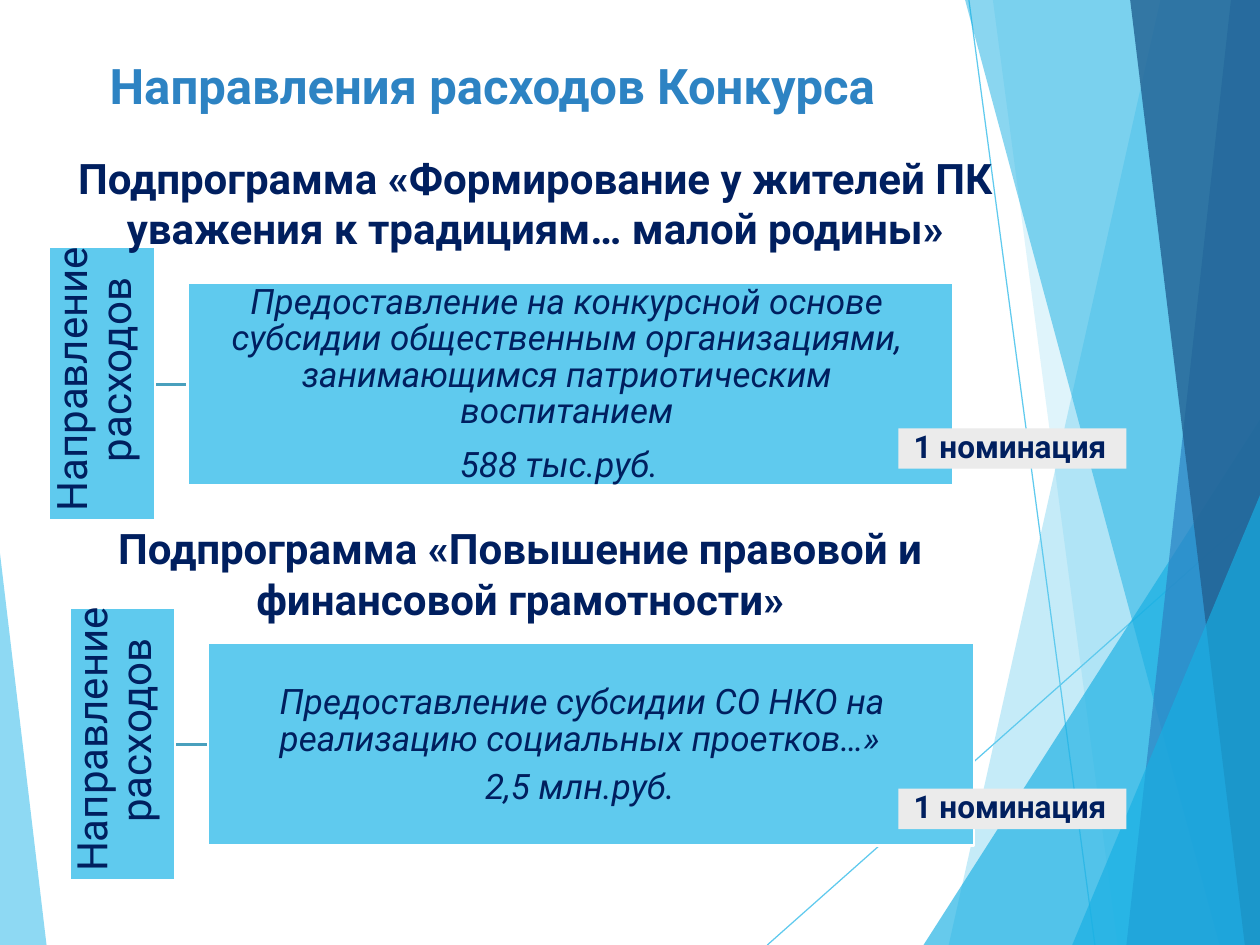
from lxml.etree import SubElement
from pptx import Presentation
from pptx.dml.color import RGBColor
from pptx.enum.shapes import MSO_CONNECTOR, MSO_SHAPE
from pptx.enum.text import MSO_ANCHOR, MSO_AUTO_SIZE, PP_ALIGN
from pptx.oxml.ns import qn
from pptx.util import Inches, Pt

COLORS = {
    "sky": "5FCAEE",
    "azure": "17AFE3",
    "blue": "2D83C3",
    "deep": "226192",
    "navy": "001F5F",
    "teal": "49A0BD",
    "gray": "EBEBEB",
    "white": "FFFFFF",
}
FONT = "Roboto"

FACETS = [
    ([(9.21, 0), (7.53, 7.5), (10, 7.5), (10, 0)], "sky", 36),
    ([(7.88, 0), (8.87, 7.5), (10, 7.5), (10, 0)], "sky", 20),
    ([(10, 3.33), (7.33, 7.5), (10, 7.5)], "azure", 66),
    ([(7.66, 0), (9.68, 7.5), (10, 7.5), (10, 0)], "azure", 50),
    ([(9.77, 0), (8.94, 7.5), (10, 7.5), (10, 0)], "blue", 70),
    ([(8.97, 0), (9.88, 7.5), (10, 7.5), (10, 0)], "deep", 80),
    ([(10, 3.93), (8.51, 7.5), (10, 7.5)], "azure", 66),
    ([(0, 4.39), (0, 7.5), (0.37, 7.5)], "sky", 70),
]


def color(name):
    return RGBColor.from_string(COLORS[name])


def add_facet(slide, points, fill, opacity):
    corners = [(Inches(x), Inches(y)) for x, y in points]
    builder = slide.shapes.build_freeform(*corners[0])
    builder.add_line_segments(corners[1:], close=True)
    shape = builder.convert_to_shape()
    shape.shadow.inherit = False
    shape.fill.solid()
    shape.fill.fore_color.rgb = color(fill)
    shape.line.fill.background()
    tint = shape.fill._xPr.find(qn("a:solidFill"))[0]
    SubElement(tint, qn("a:alpha"), val=str(opacity * 1000))


def add_line(slide, start, end, stroke, width):
    points = [Inches(value) for value in (*start, *end)]
    connector = slide.shapes.add_connector(MSO_CONNECTOR.STRAIGHT, *points)
    connector.line.color.rgb = color(stroke)
    connector.line.width = Pt(width)
    SubElement(connector._element.spPr, qn("a:effectLst"))


def add_block(slide, box, fill, outline=None):
    shape = slide.shapes.add_shape(MSO_SHAPE.RECTANGLE, *map(Inches, box))
    shape.shadow.inherit = False
    shape.fill.solid()
    shape.fill.fore_color.rgb = color(fill)
    if outline:
        shape.line.color.rgb = color(outline)
        shape.line.width = Pt(1.56)
    else:
        shape.line.fill.background()


def fill_text(shape, text, size, bold=False, italic=False, align=PP_ALIGN.LEFT,
              spacing=None, fill="navy"):
    frame = shape.text_frame
    frame.text = text
    frame.word_wrap = True
    frame.auto_size = MSO_AUTO_SIZE.NONE
    frame.vertical_anchor = MSO_ANCHOR.TOP
    frame.margin_left = frame.margin_right = frame.margin_bottom = 0
    frame.margin_top = Inches(0.01)
    paragraph = frame.paragraphs[0]
    paragraph.alignment = align
    if spacing:
        paragraph.line_spacing = Pt(spacing)
    for run in paragraph.runs:
        run.font.name = FONT
        run.font.size = Pt(size)
        run.font.bold = bold
        run.font.italic = italic
        run.font.color.rgb = color(fill)


def add_text(slide, box, text, size, **style):
    shape = slide.shapes.add_textbox(*map(Inches, box))
    fill_text(shape, text, size, **style)
    return shape


def add_side_label(slide, left, top):
    add_block(slide, (left, top, 0.84, 2.17), "sky", "white")
    label = add_text(slide, (left + 0.02, top - 0.13, 0.7, 2.24),
                     "Направление\vрасходов", 24, spacing=25.1)
    frame = label.text_frame
    frame.margin_top = Inches(0.05)
    frame._txBody.bodyPr.set("vert", "vert270")
    properties = frame.paragraphs[0]._p.get_or_add_pPr()
    properties.set("marL", str(Inches(0.4)))
    properties.set("indent", str(-Inches(0.39)))


def add_section(slide, left, top, heading, heading_box, body, body_box, body_align,
                amount, amount_box):
    middle = top + 1.09
    add_line(slide, (left + 0.84, middle), (left + 1.1, middle), "teal", 1.71)
    add_side_label(slide, left, top)
    add_block(slide, (left + 1.1, top + 0.28, 6.08, 1.61), "sky", "white")
    add_text(slide, heading_box, heading, 24, bold=True, align=PP_ALIGN.CENTER)
    add_text(slide, body_box, body, 20, italic=True, align=body_align, spacing=20.9)
    add_text(slide, amount_box, amount, 20, italic=True)
    add_block(slide, (7.13, top + 1.44, 1.81, 0.32), "gray")
    add_text(slide, (7.25, top + 1.42, 1.69, 0.33), "1 номинация", 18, bold=True)


def add_title(slide, text):
    title = slide.shapes.title
    title.left, title.top = Inches(0.87), Inches(0.43)
    title.width, title.height = Inches(6.25), Inches(0.49)
    fill_text(title, text, 28, bold=True, fill="blue")


def main():
    presentation = Presentation()
    presentation.slide_width, presentation.slide_height = Inches(10), Inches(7.5)
    slide = presentation.slides.add_slide(presentation.slide_layouts[5])
    add_title(slide, "Направления расходов Конкурса")
    add_line(slide, (7.69, 0), (8.69, 7.5), "sky", 0.72)
    add_line(slide, (10, 4.03), (6.09, 7.5), "sky", 0.72)
    for points, fill, opacity in FACETS:
        add_facet(slide, points, fill, opacity)
    add_section(
        slide, 0.39, 1.96,
        "Подпрограмма «Формирование у жителей ПК\vуважения к традициям… малой родины»",
        (0.5, 1.2, 7.5, 0.82),
        "Предоставление на конкурсной основе\vсубсидии общественным организациями,\v"
        "занимающимся патриотическим\vвоспитанием",
        (1.5, 2.25, 6, 1.2), PP_ALIGN.CENTER,
        "588 тыс.руб.", (3.65, 3.5, 1.77, 0.36))
    add_section(
        slide, 0.55, 4.82,
        "Подпрограмма «Повышение правовой и\vфинансовой грамотности»",
        (0.88, 4.14, 6.5, 0.82),
        "Предоставление субсидии СО НКО на\vреализацию социальных проетков…»",
        (2.22, 5.43, 5.2, 0.6), PP_ALIGN.LEFT,
        "2,5 млн.руб.", (3.85, 6.06, 1.69, 0.36))
    presentation.save("out.pptx")


if __name__ == "__main__":
    main()
